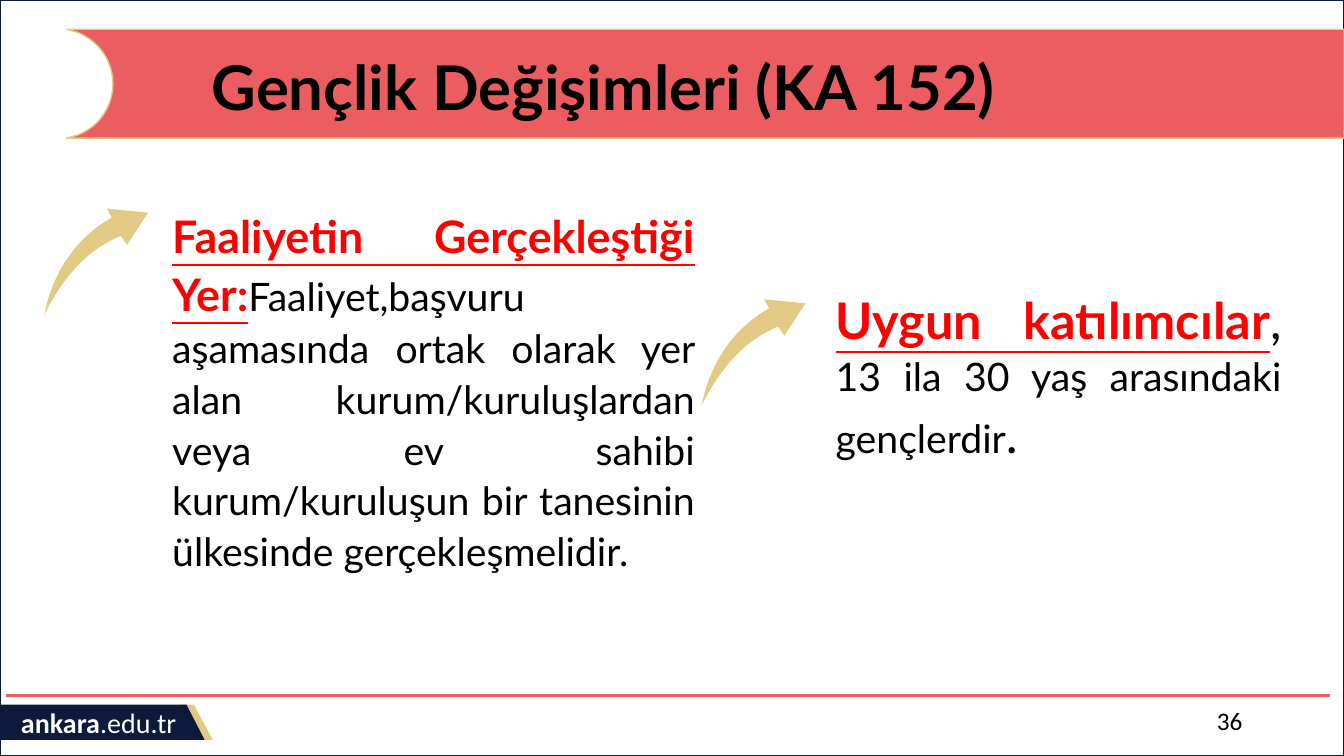
from lxml import etree
from pptx import Presentation
from pptx.dml.color import RGBColor
from pptx.enum.shapes import MSO_CONNECTOR, MSO_SHAPE
from pptx.enum.text import MSO_ANCHOR, PP_ALIGN
from pptx.oxml.ns import qn
from pptx.util import Inches, Pt

RECTANGLE, TRAPEZOID = MSO_SHAPE.RECTANGLE, MSO_SHAPE.TRAPEZOID
STRAIGHT = MSO_CONNECTOR.STRAIGHT
TOP, MIDDLE = MSO_ANCHOR.TOP, MSO_ANCHOR.MIDDLE
LEFT, RIGHT, JUSTIFY = PP_ALIGN.LEFT, PP_ALIGN.RIGHT, PP_ALIGN.JUSTIFY

WIDTH, HEIGHT = 13.33, 7.5
NAVY, GOLD, CORAL = "0D1A3C", "E3CA84", "EC5D62"
RED, BLACK, WHITE = "FF0000", "000000", "FFFFFF"

ARROW_GRID = (103, 105)
ARROW = [[(82, 36)], [(89, 25), (95, 16), (103, 4)], [(62, 0)], [(67, 9)],
         [(46, 20), (11, 49), (0, 105)], [(26, 53), (56, 35), (76, 27)]]
BANNER_GRID = (1267, 108)
BANNER = [[(0, 0)], [(1267, 0)], [(1267, 108)], [(0, 108)], [(11, 105)],
          [(32, 97), (46, 77), (46, 54)], [(46, 31), (32, 12), (11, 3)]]
TAG_GRID = (203, 35)
TAG = [[(0, 0)], [(185, 0)], [(203, 35)], [(0, 35)]]


def color(value):
    """Turn a hex string into a colour."""
    return RGBColor.from_string(value)


def paint(shape, fill=None, line=None, weight=1):
    """Set fill and line of a shape and drop its shadow."""
    shape.shadow.inherit = False
    if fill:
        shape.fill.solid()
        shape.fill.fore_color.rgb = color(fill)
    else:
        shape.fill.background()
    if line:
        shape.line.color.rgb = color(line)
        shape.line.width = Pt(weight)
    else:
        shape.line.fill.background()


def outline(slide, box, grid, steps):
    """Draw a closed outline on a grid that fills the box; three-point steps are curves."""
    left, top, width, height = box

    def place(point):
        """Turn a grid point into slide lengths."""
        return (Inches(left + point[0] * width / grid[0]),
                Inches(top + point[1] * height / grid[1]))

    builder = slide.shapes.build_freeform(*place(steps[0][0]))
    builder.add_line_segments([place(step[-1]) for step in steps[1:]], close=True)
    shape = builder.convert_to_shape()
    segments = list(shape.element.iter(qn("a:lnTo")))
    for segment, step in zip(segments, steps[1:]):
        if len(step) == 3:
            segment.tag = qn("a:cubicBezTo")
            for index, control in enumerate(step[:2]):
                x, y = place(control)
                handle = etree.Element(qn("a:pt"), x=str(x - shape.left), y=str(y - shape.top))
                segment.insert(index, handle)
    return shape


def write(shape, runs, align=LEFT, anchor=TOP, spacing=1.0, after=0, insets=(0.1, 0.1)):
    """Write one paragraph of (text, font, size, colour, bold, underlined) runs."""
    frame = shape.text_frame
    frame.word_wrap = True
    frame.vertical_anchor = anchor
    frame.margin_left, frame.margin_right = (Inches(inset) for inset in insets)
    paragraph = frame.paragraphs[0]
    paragraph.alignment = align
    paragraph.line_spacing = spacing
    paragraph.space_after = Pt(after)
    for text, font, size, ink, bold, underlined in runs:
        run = paragraph.add_run()
        run.text = text
        run.font.name, run.font.size = font, Pt(size)
        run.font.bold, run.font.underline = bold, underlined
        run.font.color.rgb = color(ink)


def text_box(slide, box, runs, **layout):
    """Add a text box holding one paragraph."""
    write(slide.shapes.add_textbox(*map(Inches, box)), runs, **layout)


def frame_slide(slide, box):
    """Draw the border around the slide."""
    paint(slide.shapes.add_shape(RECTANGLE, *map(Inches, box)), line=NAVY, weight=1.5)


def site_tag(slide, box):
    """Draw the web address tag with its gold edge."""
    left, top, width, height = box
    edge = slide.shapes.add_shape(
        TRAPEZOID, *map(Inches, (left + width - 0.44, top, 0.52, height)))
    edge.adjustments[0] = 0.536
    paint(edge, GOLD)
    paint(outline(slide, box, TAG_GRID, TAG), NAVY)
    text_box(slide, (left + 0.11, top - 0.04, 2.13, 0.44),
             [("ankara", "Calibri", 20, WHITE, True, False),
              (".edu.tr", "Calibri", 20, WHITE, False, False)])


def title_banner(slide, box, title):
    """Draw the notched banner with the title."""
    banner = outline(slide, box, BANNER_GRID, BANNER)
    paint(banner, CORAL, GOLD)
    write(banner, [(title, "Lato", 44, BLACK, True, False)], anchor=MIDDLE,
          spacing=1.07, after=8, insets=(1.44, 0.1))


def footer(slide, box, number):
    """Draw the footer rule and the page number."""
    left, top, width, height = box
    rule = slide.shapes.add_connector(
        STRAIGHT, *map(Inches, (left, top, left + width, top)))
    rule.line.color.rgb = color(CORAL)
    rule.line.width = Pt(2.25)
    etree.SubElement(rule.element.spPr, qn("a:effectLst"))
    text_box(slide, (left + width - 3.77, top + 0.05, 3, height),
             [(number, "Calibri", 18, BLACK, False, False)], align=RIGHT)


def topic(slide, box, arrow_at, runs, spacing):
    """Place a topic text and the curved arrow leading to it."""
    paint(outline(slide, (*arrow_at, 1.03, 1.05), ARROW_GRID, ARROW), GOLD)
    text_box(slide, box, runs, align=JUSTIFY, spacing=spacing, after=2.2, insets=(0.1, 0.29))


def main():
    """Build and save the slide."""
    deck = Presentation()
    deck.slide_width, deck.slide_height = Inches(WIDTH), Inches(HEIGHT)
    slide = deck.slides.add_slide(deck.slide_layouts[6])
    frame_slide(slide, (0, 0, WIDTH, HEIGHT))
    site_tag(slide, (0, 6.99, 2.03, 0.35))
    title_banner(slide, (0.66, 0.29, 12.67, 1.08), "Gençlik Değişimleri (KA 152)")
    footer(slide, (0.06, 6.9, 13.13, 0.4), "36")
    topic(slide, (1.61, 1.98, 5.57, 4.39), (0.44, 2.07), [
        ("Faaliyetin Gerçekleştiği Yer:", "Lato", 32, RED, True, True),
        ("Faaliyet,başvuru aşamasında ortak olarak yer alan kurum/kuruluşlardan veya "
         "ev sahibi kurum/kuruluşun bir tanesinin ülkesinde gerçekleşmelidir.",
         "Lato", 28, BLACK, False, False)], 1.08)
    topic(slide, (8.19, 2.78, 4.81, 2.08), (6.96, 2.97), [
        ("Uygun katılımcılar", "Lato", 36, RED, True, True),
        (", ", "Lato", 36, BLACK, False, False),
        ("13 ila 30 yaş arasındaki gençlerdir", "Lato", 28, BLACK, False, False),
        (".", "Lato", 36, BLACK, False, False)], 1.06)
    deck.save("out.pptx")


if __name__ == "__main__":
    main()
